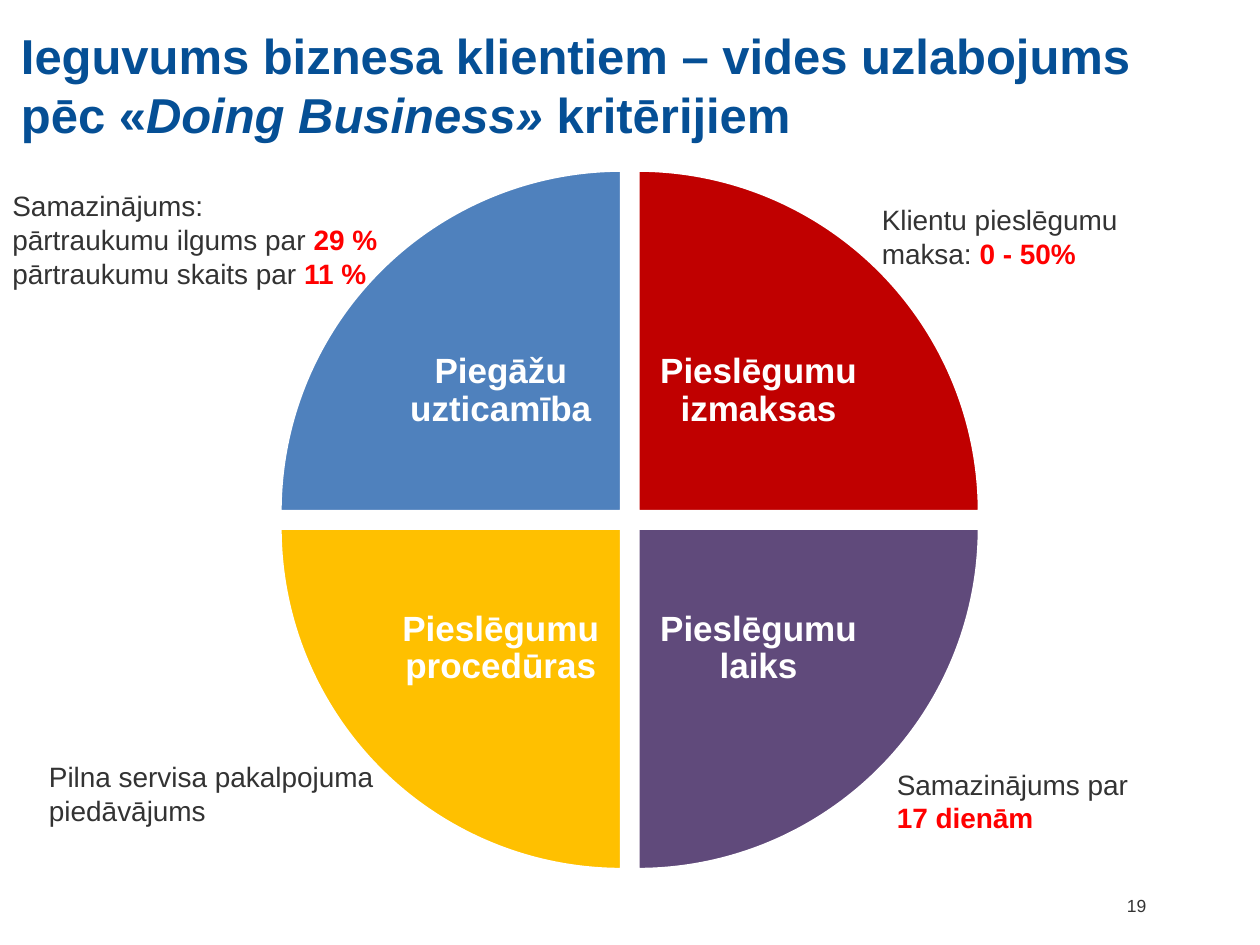
from dataclasses import dataclass

from pptx import Presentation
from pptx.dml.color import RGBColor
from pptx.enum.shapes import MSO_SHAPE
from pptx.enum.text import MSO_ANCHOR, PP_ALIGN
from pptx.util import Pt

WEDGE = MSO_SHAPE.PIE_WEDGE
CENTER = PP_ALIGN.CENTER
MIDDLE, TOP = MSO_ANCHOR.MIDDLE, MSO_ANCHOR.TOP


@dataclass(frozen=True)
class Theme:
    font: str = "Arial"
    title: str = "054F95"
    text: str = "333333"
    accent: str = "FF0000"
    white: str = "FFFFFF"
    blue: str = "4F81BD"
    red: str = "C00000"
    yellow: str = "FFC000"
    purple: str = "604A7B"
    title_size: int = 28
    wedge_size: int = 20
    note_size: int = 16
    number_size: int = 10


T = Theme()

prs = Presentation()
prs.slide_width, prs.slide_height = Pt(720), Pt(540)
s = prs.slides.add_slide(prs.slide_layouts[6])


def add_text(box, margins, anchor=TOP):
    """Add a wrapping text box and return its text frame."""
    tf = s.shapes.add_textbox(*map(Pt, box)).text_frame
    tf.word_wrap = True
    tf.vertical_anchor = anchor
    tf.margin_left = tf.margin_right = Pt(margins[0])
    tf.margin_top = tf.margin_bottom = Pt(margins[1])
    return tf


def style(p, size, color, bold=False):
    p.font.name, p.font.size, p.font.bold = T.font, Pt(size), bold
    p.font.color.rgb = RGBColor.from_string(color)


# Title
p = add_text((12, 14.4, 664, 38), (0, 0)).paragraphs[0]
style(p, T.title_size, T.title, bold=True)
for text, italic in (
    ("Ieguvums biznesa klientiem – vides uzlabojums pēc «", False),
    ("Doing Business» ", True),
    ("kritērijiem", False),
):
    r = p.add_run()
    r.text, r.font.italic = text, italic

# Slide number
p = add_text((607, 510.5, 85, 14.4), (0, 0), MIDDLE).paragraphs[0]
p.text, p.alignment = "19", CENTER
style(p, T.number_size, T.text)

# Four wedges around a centre, each with its label in the inner corner
LEFT, UPPER, SIDE, PITCH, LABEL = 160, 97.2, 195.2, 204.5, 138
wedges = (
    (0, 0, 0, T.blue, "Piegāžu uzticamība"),
    (1, 0, 90, T.red, "Pieslēgumu izmaksas"),
    (1, 1, 180, T.purple, "Pieslēgumu laiks"),
    (0, 1, 270, T.yellow, "Pieslēgumu procedūras"),
)
for col, row, angle, color, label in wedges:
    x, y = LEFT + col * PITCH, UPPER + row * PITCH
    sp = s.shapes.add_shape(WEDGE, Pt(x), Pt(y), Pt(SIDE), Pt(SIDE))
    sp.rotation = angle
    sp.shadow.inherit = False
    sp.fill.solid()
    sp.fill.fore_color.rgb = RGBColor.from_string(color)
    sp.line.color.rgb = RGBColor.from_string(T.white)
    sp.line.width = Pt(2)

    inset = SIDE - LABEL
    box = (x + (1 - col) * inset, y + (1 - row) * inset, LABEL, LABEL)
    p = add_text(box, (11.4, 11.4), MIDDLE).paragraphs[0]
    p.text, p.alignment, p.line_spacing = label, CENTER, 0.9
    style(p, T.wedge_size, T.white, bold=True)

# Notes beside the wedges: each line is plain text and a highlighted value
notes = (
    ((496.8, 112.3, 151.2, 46), [("Klientu pieslēgumu maksa: ", "0 - 50%")]),
    ((505.4, 434.9, 165, 46), [("Samazinājums par ", "17 dienām")]),
    ((20.9, 430.6, 200.2, 46), [("Pilna servisa pakalpojuma piedāvājums", "")]),
    ((0, 104.4, 226.8, 65.5), [
        ("Samazinājums:", ""),
        ("pārtraukumu ilgums par ", "29 %"),
        ("pārtraukumu skaits par ", "11 %"),
    ]),
)
for box, lines in notes:
    tf = add_text(box, (7.2, 3.6))
    for i, (plain, value) in enumerate(lines):
        p = tf.add_paragraph() if i else tf.paragraphs[0]
        style(p, T.note_size, T.text)
        p.add_run().text = plain
        if value:
            r = p.add_run()
            r.text, r.font.bold = value, True
            r.font.color.rgb = RGBColor.from_string(T.accent)

prs.save("out.pptx")
